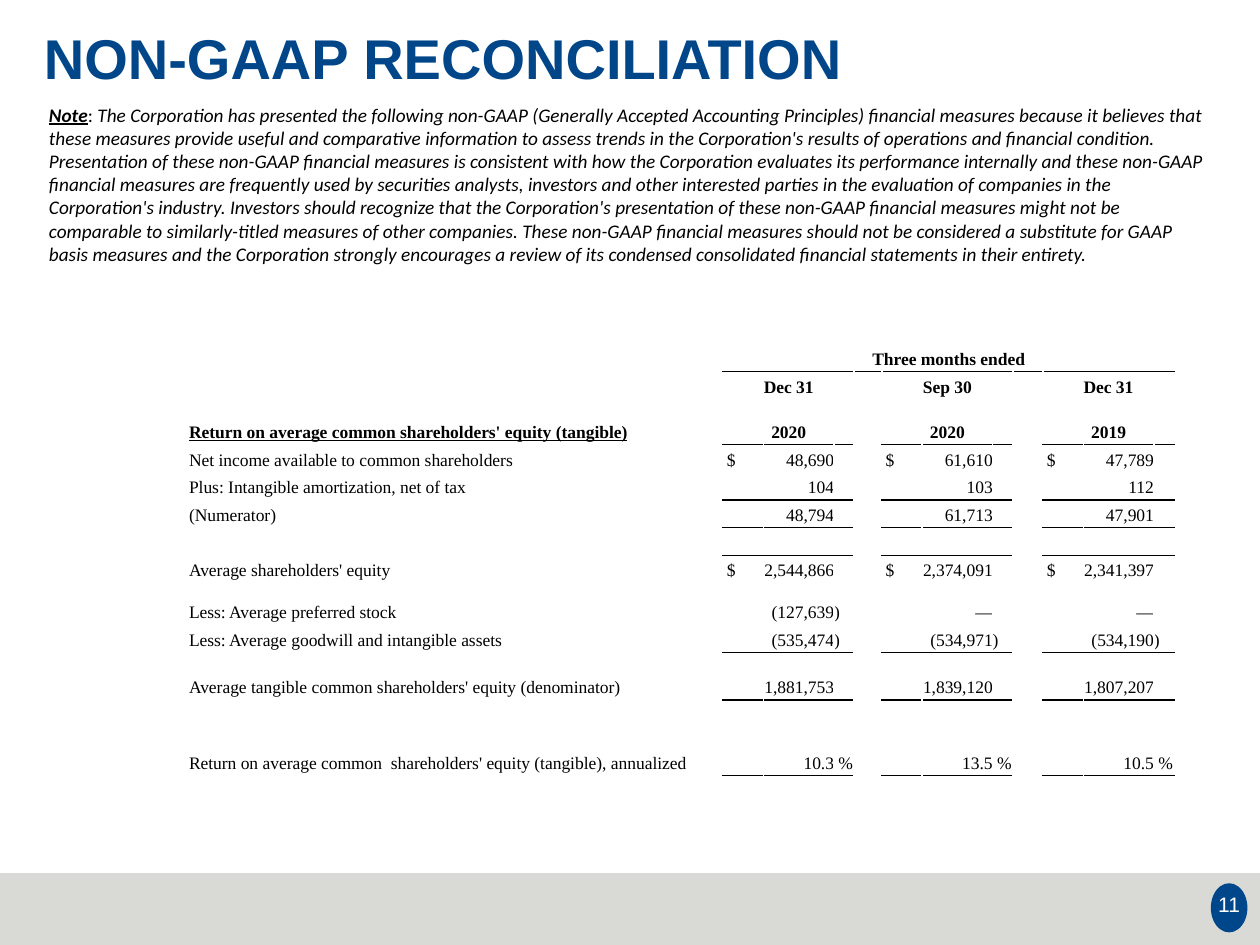
from collections import namedtuple

from lxml.etree import SubElement
from pptx import Presentation
from pptx.dml.color import RGBColor
from pptx.enum.shapes import MSO_SHAPE as Shape
from pptx.enum.text import MSO_ANCHOR as Anchor, PP_ALIGN as Align
from pptx.oxml.ns import qn
from pptx.util import Inches, Pt

BLUE, GRAY, BLACK, WHITE = "00468B", "D9D9D6", "000000", "FFFFFF"
TITLE_BLUE = "004689"

NOTE_SENTENCES = [
    "The Corporation has presented the following non-GAAP (Generally Accepted Accounting "
    "Principles) financial measures because it believes that these measures provide useful and "
    "comparative information to assess trends in the Corporation's results of operations and "
    "financial condition.",
    "Presentation of these non-GAAP financial measures is consistent with how the Corporation "
    "evaluates its performance internally and these non-GAAP financial measures are frequently "
    "used by securities analysts, investors and other interested parties in the evaluation of "
    "companies in the Corporation's industry.",
    "Investors should recognize that the Corporation's presentation of these non-GAAP financial "
    "measures might not be comparable to similarly-titled measures of other companies.",
    "These non-GAAP financial measures should not be considered a substitute for GAAP basis "
    "measures and the Corporation strongly encourages a review of its condensed consolidated "
    "financial statements in their entirety.",
]

# Each period takes three columns: currency sign, number, closing sign
PERIOD = [0.32, 0.56, 0.16]
COLUMNS = [3.7, 0.57, *PERIOD, 0.22, *PERIOD, 0.24, *PERIOD]
PERIOD_STARTS = (2, 6, 10)
PERIOD_COLUMNS = {start + i for start in PERIOD_STARTS for i in range(3)}

Row = namedtuple("Row", "height label values ruled header", defaults=(False, False))
ROWS = [
    Row(0.22, "", [], header=True),
    Row(0.22, "", ["Dec 31", "Sep 30", "Dec 31"], header=True),
    Row(0.36, "Return on average common shareholders' equity (tangible)",
        ["2020", "2020", "2019"], ruled=True, header=True),
    Row(0.22, "Net income available to common shareholders", ["$48,690", "$61,610", "$47,789"]),
    Row(0.22, "Plus: Intangible amortization, net of tax", ["104", "103", "112"], ruled=True),
    Row(0.22, "(Numerator)", ["48,794", "61,713", "47,901"], ruled=True),
    Row(0.22, "", [], ruled=True),
    Row(0.22, "Average shareholders' equity", ["$2,544,866", "$2,374,091", "$2,341,397"]),
    Row(0.33, "Less: Average preferred stock", ["(127,639)", "—", "—"]),
    Row(0.22, "Less: Average goodwill and intangible assets",
        ["(535,474)", "(534,971)", "(534,190)"], ruled=True),
    Row(0.38, "Average tangible common shareholders' equity (denominator)",
        ["1,881,753", "1,839,120", "1,807,207"], ruled=True),
    Row(0.22, "", []),
    Row(0.38, "Return on average common  shareholders' equity (tangible), annualized",
        ["10.3%", "13.5%", "10.5%"], ruled=True),
    Row(0.22, "", []),
]


def color(value):
    return RGBColor.from_string(value)


def add_text(frame, text, font="Arial", size=12, fill=BLACK, bold=False, italic=False,
             underline=False, align=Align.LEFT, spacing=1.0):
    """Append a span to the last paragraph of the frame."""
    para = frame.paragraphs[-1]
    para.alignment, para.line_spacing = align, spacing
    span = para.add_run()
    span.text = text
    span.font.name, span.font.size = font, Pt(size)
    span.font.bold, span.font.italic, span.font.underline = bold, italic, underline
    span.font.color.rgb = color(fill)


def add_box(page, left, top, width, height, anchor=Anchor.TOP):
    box = page.shapes.add_textbox(Inches(left), Inches(top), Inches(width), Inches(height))
    frame = box.text_frame
    frame.word_wrap, frame.vertical_anchor = True, anchor
    frame.margin_left = frame.margin_right = frame.margin_bottom = Inches(0.1)
    frame.margin_top = Inches(0.06)
    return frame


def add_plain_shape(page, kind, left, top, width, height, fill):
    shape = page.shapes.add_shape(kind, Inches(left), Inches(top), Inches(width), Inches(height))
    shape.shadow.inherit = False
    shape.fill.solid()
    shape.fill.fore_color.rgb = color(fill)
    shape.line.fill.background()


def add_footer(page, left, top, width, height):
    add_plain_shape(page, Shape.RECTANGLE, left, top, width, height, GRAY)
    add_plain_shape(page, Shape.OVAL, left + width - 0.39, top + 0.08, 0.29, 0.39, BLUE)
    number = add_box(page, left + width - 0.48, top + 0.07, 0.47, 0.39, Anchor.MIDDLE)
    add_text(number, "11", fill=WHITE, align=Align.CENTER)


def add_title(page, left, top, width, height):
    frame = add_box(page, left, top, width, height)
    add_text(frame, "NON-GAAP RECONCILIATION", size=32, fill=TITLE_BLUE, bold=True, spacing=0.9)


def add_note(page, left, top, width, height):
    frame = add_box(page, left, top, width, height)
    style = dict(font="Calibri", size=11)
    add_text(frame, "Note", bold=True, italic=True, underline=True, **style)
    add_text(frame, ": ", **style)
    add_text(frame, " ".join(NOTE_SENTENCES), italic=True, **style)


def set_borders(cell, top, bottom):
    properties = cell._tc.get_or_add_tcPr()
    sides = {"a:lnL": WHITE, "a:lnR": WHITE, "a:lnT": top, "a:lnB": bottom}
    for index, (side, value) in enumerate(sides.items()):
        line = properties.makeelement(qn(side), {"w": str(Pt(1))})
        SubElement(SubElement(line, qn("a:solidFill")), qn("a:srgbClr"), val=value)
        properties.insert(index, line)


def prepare_cell(cell):
    cell.fill.background()
    cell.vertical_anchor = Anchor.BOTTOM
    cell.margin_left = cell.margin_right = cell.margin_top = 0
    cell.margin_bottom = Inches(0.02)
    # Small end mark keeps empty rows at their height
    SubElement(cell.text_frame.paragraphs[0]._p, qn("a:endParaRPr"), sz="1000")


def fill_cell(cell, text, left=0.0, right=0.0, **style):
    cell.margin_left, cell.margin_right = Inches(left), Inches(right)
    add_text(cell.text_frame, text, font="Times New Roman", size=10, **style)


def ruled_columns(index):
    """Columns with a black rule below the given row."""
    if index == 0:
        return set(range(2, len(COLUMNS)))
    return PERIOD_COLUMNS if index > 0 and ROWS[index].ruled else set()


def fill_value(table, index, start, text, header):
    first, number, last = (table.cell(index, start + i) for i in range(3))
    if header:
        first.merge(last)
        fill_cell(first, text, 0.03, 0.03, bold=True, align=Align.CENTER)
        return
    if text.startswith("$"):
        fill_cell(first, "$", left=0.03)
    else:
        first.merge(number)
        number = first
    closing = text[-1] if text[-1] in ")%" else ""
    fill_cell(number, text.strip("$)%"), align=Align.RIGHT)
    if closing == ")":
        fill_cell(last, closing)
    elif closing == "%":
        fill_cell(last, closing, right=0.01, align=Align.RIGHT)


def add_reconciliation(page, left, top, width, height):
    table = page.shapes.add_table(len(ROWS), len(COLUMNS), Inches(left), Inches(top),
                                  Inches(width), Inches(height)).table
    table.first_row = table.horz_banding = False
    for column, size in zip(table.columns, COLUMNS):
        column.width = Inches(size)
    for index, row in enumerate(ROWS):
        table.rows[index].height = Inches(row.height)
        above, below = ruled_columns(index - 1), ruled_columns(index)
        for position, cell in enumerate(table.rows[index].cells):
            prepare_cell(cell)
            set_borders(cell, BLACK if position in above else WHITE,
                        BLACK if position in below else WHITE)
        if row.label:
            label = table.cell(index, 0)
            label.merge(table.cell(index, 1))
            fill_cell(label, row.label, 0.03, 0.03, bold=row.header, underline=row.header)
        for start, text in zip(PERIOD_STARTS, row.values):
            fill_value(table, index, start, text, row.header)
    # Heading over all periods
    heading = table.cell(0, 2)
    heading.merge(table.cell(0, len(COLUMNS) - 1))
    fill_cell(heading, "Three months ended", 0.03, 0.03, bold=True, align=Align.CENTER)


def main():
    deck = Presentation()
    deck.slide_width, deck.slide_height = Inches(10), Inches(7.5)
    page = deck.slides.add_slide(deck.slide_layouts[6])
    add_footer(page, 0, 6.93, 10, 0.57)
    add_title(page, 0.25, 0.19, 9.67, 1.14)
    add_note(page, 0.29, 0.76, 9.41, 1.4)
    add_reconciliation(page, 1.47, 2.73, sum(COLUMNS), sum(row.height for row in ROWS))
    deck.save("out.pptx")


if __name__ == "__main__":
    main()
